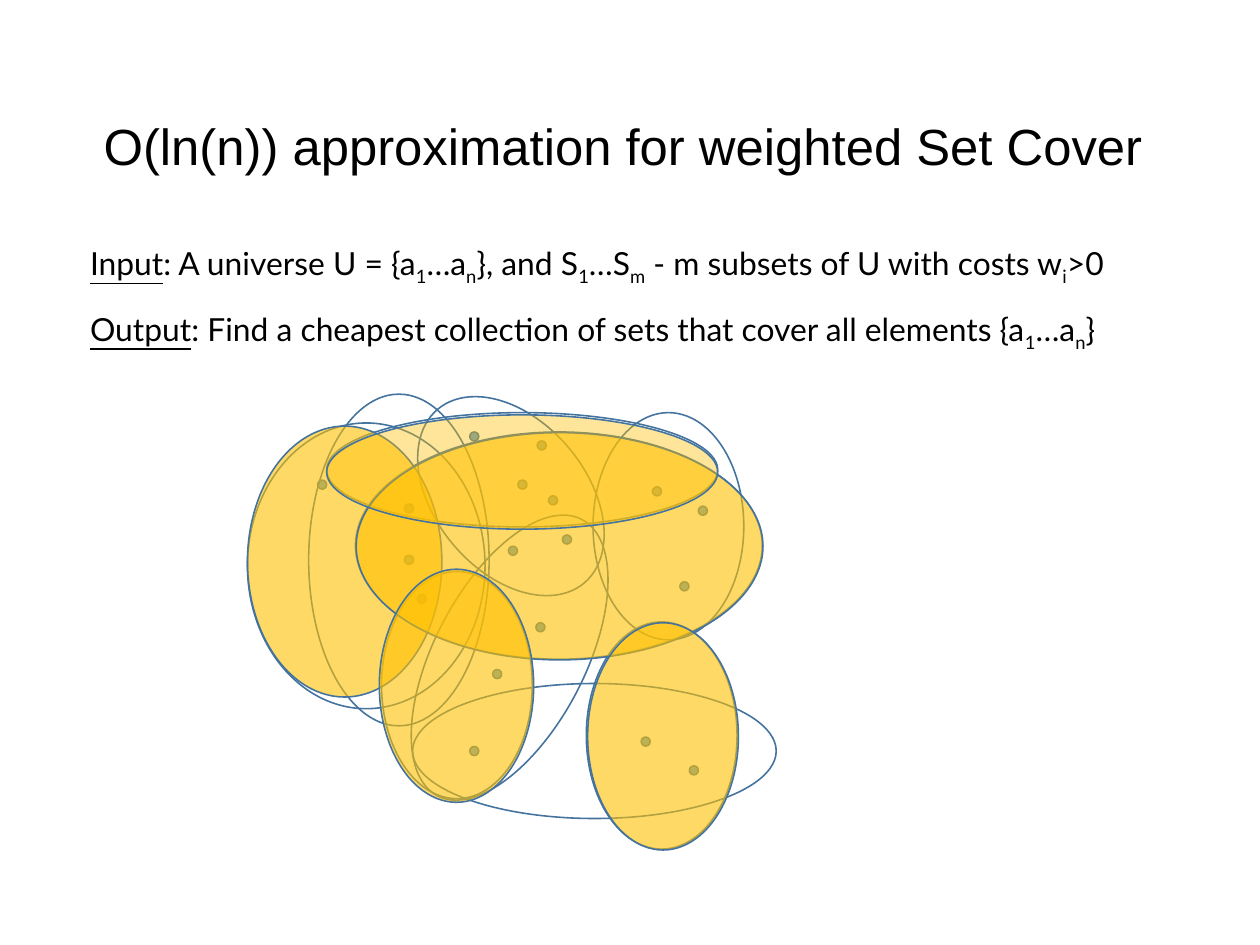
from pptx import Presentation
from pptx.dml.color import RGBColor as Rgb
from pptx.enum.shapes import MSO_SHAPE as Shape
from pptx.enum.text import MSO_ANCHOR as Anchor, MSO_AUTO_SIZE as Fit, PP_ALIGN as Align
from pptx.oxml.ns import qn
from pptx.util import Cm, Pt
from lxml.etree import SubElement as Sub

HUES = {"ink": "000000", "dot": "5B9BD5", "edge": "43739E", "gold": "FFC000"}
TITLE = "O(ln(n)) approximation for weighted Set Cover"
GOALS = [
    ("Input", ": A universe U = {a_1_…a_n_}, and S_1_…S_m_ - m subsets of U with costs w_i_>0"),
    ("Output", ": Find a cheapest collection of sets that cover all elements {a_1_…a_n_}"),
]
DOTS = [
    (3.77, 4.71), (3.49, 2.7), (5.8, 3.64), (3.49, 3.84), (7, 3.39), (9.61, 4.43),
    (9, 2.32), (6.69, 2.52), (10.02, 2.75), (6.01, 2.17), (4.94, 1.1), (8.75, 7.88),
    (5.45, 6.38), (9.82, 8.52), (6.44, 1.3), (4.94, 8.09), (6.41, 5.34), (1.56, 2.17),
]
RINGS = [
    (0, 0.9, 5.28, 6.35, 0),
    (3.67, 6.69, 8.08, 3, 0),
    (1.36, 0.26, 4.01, 7.37, 0),
    (1.76, 0.67, 8.69, 2.54, 0),
    (7.68, 0.67, 3.35, 5.05, 0),
    (7.53, 5.32, 3.35, 5.05, 0),
    (4.18, 0, 3.35, 5.05, 319.8),
    (2.98, 4.2, 3.35, 5.05, 0),
    (4.15, 2.65, 3.35, 6.93, 27.6),
    (2.4, 1.1, 9.04, 5.05, 0),
]
PICKS = [
    (0, 0.97, 4.32, 6.02, 0, 60),
    (4.41, -0.88, 5.05, 9.04, 90, 60),
    (2.93, 4.15, 3.43, 5.18, 0, 60),
    (7.56, 5.34, 3.35, 5.05, 0, 60),
    (1.76, 0.72, 8.69, 2.54, 0, 40),
]


def put(par, text, size=20, face="Lato", line=False, base=0):
    """Add one run of text in the given format."""
    run = par.add_run()
    run.text = text
    font = run.font
    font.size, font.name, font.underline = Pt(size), face, line
    font.color.rgb = Rgb.from_string(HUES["ink"])
    if base:
        font._element.set("baseline", str(base * 1000))


def frame(hold, box, anchor):
    """Move a placeholder to the box and return its bare text frame."""
    hold.left, hold.top, hold.width, hold.height = map(Cm, box)
    text = hold.text_frame
    text.margin_left = text.margin_right = text.margin_top = text.margin_bottom = 0
    text.word_wrap, text.auto_size = True, Fit.NONE
    text.vertical_anchor = anchor
    return text


def shift(par, left, first):
    """Set the indent of a paragraph and turn its bullet off."""
    props = par._p.get_or_add_pPr()
    props.set("marL", str(Cm(left)))
    props.set("indent", str(Cm(first)))
    Sub(props, qn("a:buNone"))
    par.alignment = Align.LEFT
    par.space_before = Pt(0)


def head(slide, box):
    """Fill the title."""
    par = frame(slide.shapes.title, box, Anchor.MIDDLE).paragraphs[0]
    shift(par, 1.78, -1.48)
    par.line_spacing = 0.95
    put(par, TITLE, size=32, face="Arial")


def goals(slide, box):
    """Fill the body with the input and output of the problem."""
    text = frame(slide.placeholders[1], box, Anchor.TOP)
    for num, (name, rest) in enumerate(GOALS):
        par = text.add_paragraph() if num else text.paragraphs[0]
        shift(par, 0, 0)
        par.space_after = Pt(14.2)
        put(par, name, line=True)
        for part, words in enumerate(rest.split("_")):
            put(par, words, base=-25 if part % 2 else 0)


def oval(slide, box, turn=0, fill=None, alpha=100):
    """Draw an ellipse with an edge and an optional fill."""
    form = slide.shapes.add_shape(Shape.OVAL, *map(Cm, box))
    form.rotation = turn
    form.shadow.inherit = False
    form.line.color.rgb = Rgb.from_string(HUES["edge"])
    form.line.width = Pt(1)
    if not fill:
        form.fill.background()
        return
    form.fill.solid()
    form.fill.fore_color.rgb = Rgb.from_string(HUES[fill])
    if alpha < 100:
        tint = form._element.spPr.find(qn("a:solidFill"))[0]
        Sub(tint, qn("a:alpha"), val=str(alpha * 1000))


def cover(slide, left, top):
    """Draw the elements, all the sets and the chosen sets."""
    for x, y in DOTS:
        oval(slide, (left + x, top + y, 0.2, 0.2), fill="dot")
    for x, y, wide, high, turn in RINGS:
        oval(slide, (left + x, top + y, wide, high), turn)
    for x, y, wide, high, turn, alpha in PICKS:
        oval(slide, (left + x, top + y, wide, high), turn, "gold", alpha)


def main():
    """Build the slide and save it."""
    deck = Presentation()
    deck.slide_width, deck.slide_height = Cm(28), Cm(21)
    slide = deck.slides.add_slide(deck.slide_layouts[1])
    head(slide, (2, 1.88, 23.5, 2.84))
    goals(slide, (2, 5.41, 24.59, 13.23))
    cover(slide, 5.5, 8.5)
    deck.save("out.pptx")


if __name__ == "__main__":
    main()
